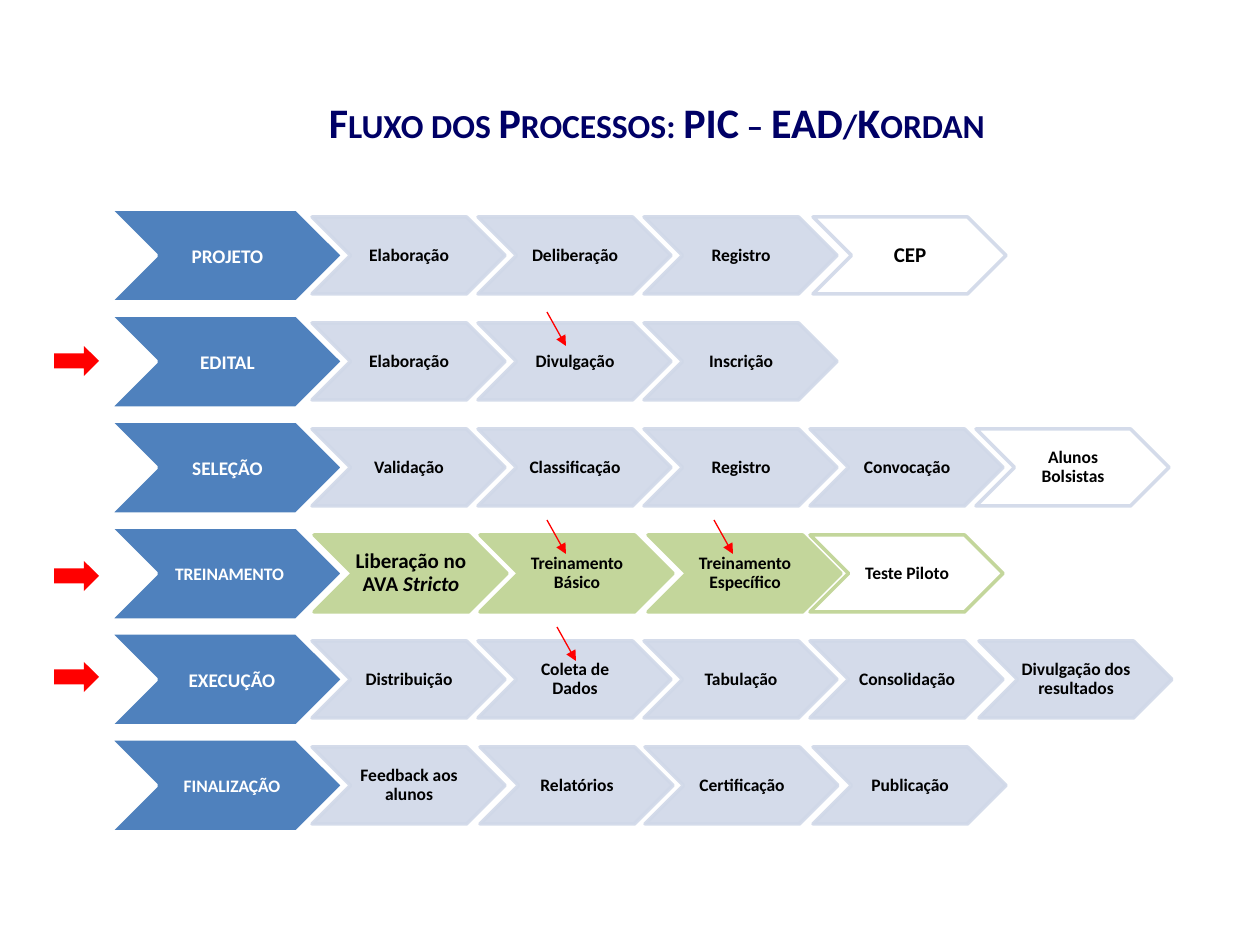
from dataclasses import dataclass

import pptx
import pptx.dml.color
import pptx.enum.shapes
import pptx.enum.text
import pptx.oxml
import pptx.oxml.ns
import pptx.util

RGBColor = pptx.dml.color.RGBColor
Shape = pptx.enum.shapes.MSO_SHAPE
Align = pptx.enum.text.PP_ALIGN
Anchor = pptx.enum.text.MSO_ANCHOR
qn = pptx.oxml.ns.qn

NAVY = RGBColor(0x00, 0x00, 0x66)
BLUE = RGBColor(0x4F, 0x81, 0xBD)
PALE = RGBColor(0xD0, 0xD8, 0xE8)
GREEN = RGBColor(0xC3, 0xD6, 0x9B)
RED = RGBColor(0xFF, 0x00, 0x00)
WHITE = RGBColor(0xFF, 0xFF, 0xFF)
BLACK = RGBColor(0x00, 0x00, 0x00)

EMU_PER_PX = 914400 / 126
FONT = "Calibri"
ROW_TOP, ROW_PITCH = 209, 106
PHASE_LEFT, PHASE_WIDTH, PHASE_HEIGHT = 110, 233, 93
STEP_LEFT, STEP_PITCH, STEP_WIDTH, STEP_HEIGHT = 312, 166, 193, 77


@dataclass
class Step:
    text: str
    nudge: int = 0
    size: int = 10
    italic_end: str = ""
    fill: RGBColor | None = PALE
    line: RGBColor = PALE
    alpha: int = 90


@dataclass
class Phase:
    text: str
    steps: list
    size: int = 11
    indent: int = 0


def green_step(text, nudge=0, fill=GREEN, **options):
    return Step(text, nudge, fill=fill, line=GREEN, alpha=100, **options)


PHASES = [
    Phase("PROJETO", [Step("Elaboração"), Step("Deliberação"), Step("Registro"),
                      Step("CEP", 3, size=12, fill=None)]),
    Phase("EDITAL", [Step("Elaboração"), Step("Divulgação"), Step("Inscrição")]),
    Phase("SELEÇÃO", [Step("Validação"), Step("Classificação"), Step("Registro"),
                      Step("Convocação"), Step("Alunos Bolsistas", fill=None)]),
    Phase("TREINAMENTO", [green_step("Liberação no AVA ", 2, size=12, italic_end="Stricto"),
                          green_step("Treinamento Básico", 2),
                          green_step("Treinamento Específico", 4),
                          green_step("Teste Piloto", fill=WHITE)], size=10, indent=4),
    Phase("EXECUÇÃO", [Step("Distribuição"), Step("Coleta de Dados"), Step("Tabulação"),
                       Step("Consolidação"), Step("Divulgação dos resultados", 3)], indent=9),
    Phase("FINALIZAÇÃO", [Step("Feedback aos alunos"), Step("Relatórios", 2),
                          Step("Certificação", 1), Step("Publicação", 3)], size=10, indent=9),
]
PHASE_MARKER_TOPS = [346, 561, 662]
STEP_POINTERS = [(547, 312), (547, 520), (714, 520), (557, 627)]


def px(length):
    return pptx.util.Emu(round(length * EMU_PER_PX))


def write_text(shape, text, size, color, italic_end="", align=Align.CENTER, anchor=Anchor.MIDDLE,
               margins=(1, 1, 0, 1), line_spacing=None, small_caps=False):
    frame = shape.text_frame
    frame.word_wrap = True
    frame.auto_size = pptx.enum.text.MSO_AUTO_SIZE.NONE
    frame.vertical_anchor = anchor
    frame.margin_left, frame.margin_top, frame.margin_right, frame.margin_bottom = map(px, margins)
    paragraph = frame.paragraphs[0]
    paragraph.alignment = align
    paragraph.space_before = pptx.util.Pt(0)
    paragraph.line_spacing = line_spacing
    for content, italic in ((text, False), (italic_end, True)):
        if content:
            run = paragraph.add_run()
            run.text = content
            run.font.name = FONT
            run.font.size = pptx.util.Pt(size)
            run.font.bold = True
            run.font.italic = italic
            run.font.color.rgb = color
            if small_caps:
                run.font._element.set("cap", "small")


def set_opacity(shape, percent):
    for color in shape._element.spPr.iter(qn("a:srgbClr")):
        alpha = color.makeelement(qn("a:alpha"), {"val": str(percent * 1000)})
        color.append(alpha)


def add_block(slide, kind, left, top, width, height, fill, line=None, alpha=100):
    shape = slide.shapes.add_shape(kind, px(left), px(top), px(width), px(height))
    shape.shadow.inherit = False
    if fill is None:
        shape.fill.background()
    else:
        shape.fill.solid()
        shape.fill.fore_color.rgb = fill
    if line is None:
        shape.line.fill.background()
    else:
        shape.line.color.rgb = line
        shape.line.width = pptx.util.Pt(2)
    if alpha < 100:
        set_opacity(shape, alpha)
    return shape


def add_phase(slide, phase, top):
    head = add_block(slide, Shape.CHEVRON, PHASE_LEFT, top, PHASE_WIDTH, PHASE_HEIGHT, BLUE, WHITE)
    write_text(head, phase.text, phase.size, WHITE, margins=(2 + phase.indent, 1, 0, 1))
    step_top = top + (PHASE_HEIGHT - STEP_HEIGHT) // 2
    for index, step in enumerate(phase.steps):
        left = STEP_LEFT + index * STEP_PITCH + step.nudge
        shape = add_block(slide, Shape.CHEVRON, left, step_top, STEP_WIDTH, STEP_HEIGHT,
                          step.fill, step.line, step.alpha)
        write_text(shape, step.text, step.size, BLACK, italic_end=step.italic_end, line_spacing=0.9)


def add_pointer(slide, left, top):
    connector = slide.shapes.add_connector(pptx.enum.shapes.MSO_CONNECTOR.STRAIGHT,
                                           px(left), px(top), px(left + 19), px(top + 34))
    connector.line.color.rgb = RED
    connector.line.width = pptx.util.Pt(0.75)
    line = connector.line._get_or_add_ln()
    line.append(line.makeelement(qn("a:tailEnd"), {"type": "triangle"}))
    properties = connector._element.spPr
    properties.append(properties.makeelement(qn("a:effectLst"), {}))


def add_title(slide, text):
    title = slide.shapes.title
    title.left, title.top, title.width, title.height = map(px, (316, 91, 742, 74))
    write_text(title, text, 24, NAVY, align=Align.LEFT, anchor=Anchor.TOP,
               margins=(13, 6, 13, 6), small_caps=True)


def main():
    presentation = pptx.Presentation()
    presentation.slide_width, presentation.slide_height = px(1260), px(945)
    slide = presentation.slides.add_slide(presentation.slide_layouts[5])
    add_title(slide, "Fluxo dos Processos: PIC – EAD/Kordan")
    for row, phase in enumerate(PHASES):
        add_phase(slide, phase, ROW_TOP + row * ROW_PITCH)
    for top in PHASE_MARKER_TOPS:
        add_block(slide, Shape.RIGHT_ARROW, 54, top, 45, 30, RED)
    for left, top in STEP_POINTERS:
        add_pointer(slide, left, top)
    presentation.save("out.pptx")


if __name__ == "__main__":
    main()
